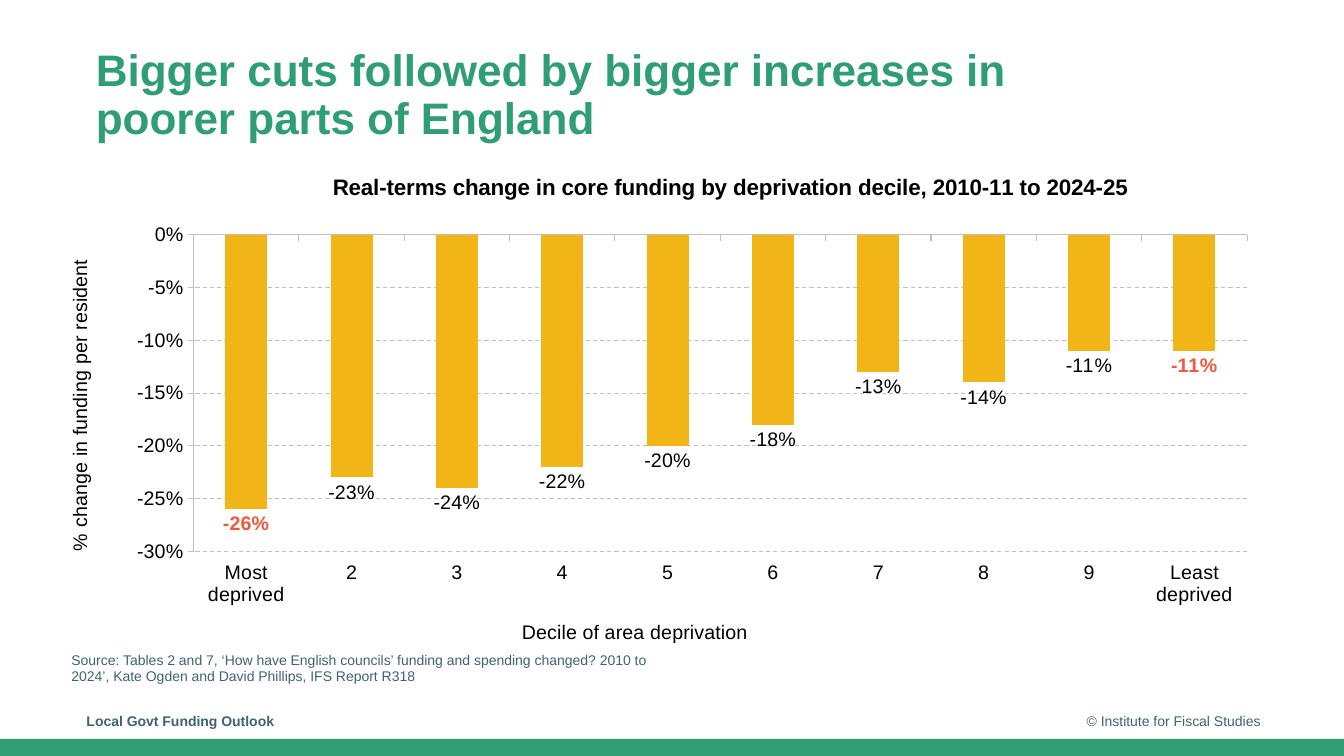
import pptx
import pptx.chart.data
import pptx.dml.color
import pptx.enum.chart
import pptx.enum.dml
import pptx.enum.shapes
import pptx.enum.text
import pptx.oxml
import pptx.oxml.ns
import pptx.util

WIDTH, HEIGHT = 13.33, 7.5
GREEN, SLATE, AMBER, CORAL, GREY, BLACK = "309E75", "40646D", "F2B517", "EE5A3C", "BFBFBF", "000000"
DECILES = ["Most deprived", "2", "3", "4", "5", "6", "7", "8", "9", "Least deprived"]
CHANGES = [-0.26, -0.23, -0.24, -0.22, -0.2, -0.18, -0.13, -0.14, -0.11, -0.11]
qn = pptx.oxml.ns.qn


def colour(value):
    return pptx.dml.color.RGBColor.from_string(value)


def inches(box):
    return [pptx.util.Inches(length) for length in box]


def style_font(font, size=14, color=BLACK, bold=False):
    font.name = "Arial"
    font.size = pptx.util.Pt(size)
    font.bold = bold
    font.color.rgb = colour(color)


def write_text(frame, text, align="LEFT", spacing=None, anchor=None, **style):
    frame.word_wrap = True
    if anchor:
        frame.vertical_anchor = anchor
    para = frame.paragraphs[0]
    para.alignment = getattr(pptx.enum.text.PP_ALIGN, align)
    para.line_spacing = spacing
    span = para.add_run()
    span.text = text
    style_font(span.font, **style)


def add_note(page, box, text, **style):
    note = page.shapes.add_textbox(*inches(box))
    write_text(note.text_frame, text, anchor=pptx.enum.text.MSO_ANCHOR.MIDDLE,
               size=10, color=SLATE, **style)


def add_heading(page, box, text):
    title = page.shapes.title
    title.left, title.top, title.width, title.height = inches(box)
    write_text(title.text_frame, text, spacing=0.9, anchor=pptx.enum.text.MSO_ANCHOR.TOP,
               size=31.5, color=GREEN, bold=True)


def add_footer(page, box):
    left, top, width, height = box
    bar_height = 0.17
    bar = page.shapes.add_shape(pptx.enum.shapes.MSO_SHAPE.RECTANGLE,
                                *inches((left, top + height - bar_height, width, bar_height)))
    bar.shadow.inherit = False
    bar.fill.solid()
    bar.fill.fore_color.rgb = colour(GREEN)
    bar.line.fill.background()
    add_note(page, (left + 0.76, top, 8.84, 0.4), "Local Govt Funding Outlook", bold=True)
    add_note(page, (left + 9.6, top, 3, 0.4), "© Institute for Fiscal Studies", align="RIGHT")


def place_part(element, index, frame, **lengths):
    for old in element.findall(qn("c:layout")):
        element.remove(old)
    inner = '<c:layoutTarget val="inner"/>' if "w" in lengths else ""
    modes = '<c:xMode val="edge"/><c:yMode val="edge"/>'
    sizes = "".join(
        f'<c:{key} val="{length / frame[2 if key in "xw" else 3]:.4f}"/>'
        for key, length in lengths.items())
    element.insert(index, pptx.oxml.parse_xml(
        f'<c:layout {pptx.oxml.ns.nsdecls("c")}><c:manualLayout>'
        f'{inner}{modes}{sizes}</c:manualLayout></c:layout>'))


def add_chart_title(owner, text, box, x, y, **style):
    title = owner.chart_title if hasattr(owner, "chart_title") else owner.axis_title
    frame = title.text_frame
    span = frame.paragraphs[0].add_run()
    span.text = text
    style_font(span.font, **style)
    element = frame._txBody.getparent().getparent()
    place_part(element, 1, box, x=x, y=y)
    return element


def style_line(line):
    line.color.rgb = colour(GREY)
    line.width = pptx.util.Pt(0.75)


def style_axis(axis):
    axis.major_tick_mark = pptx.enum.chart.XL_TICK_MARK.OUTSIDE
    axis.minor_tick_mark = pptx.enum.chart.XL_TICK_MARK.NONE
    style_line(axis.format.line)
    style_font(axis.tick_labels.font)


def style_bars(plot):
    plot.gap_width = 150
    plot.vary_by_categories = False
    series = plot.series[0]
    series.invert_if_negative = False
    series.format.fill.solid()
    series.format.fill.fore_color.rgb = colour(AMBER)
    outside = pptx.enum.chart.XL_LABEL_POSITION.OUTSIDE_END
    labels = series.data_labels
    labels.show_value = True
    labels.number_format = "0%"
    labels.number_format_is_linked = False
    labels.position = outside
    style_font(labels.font)
    for end in (0, len(DECILES) - 1):
        label = series.points[end].data_label
        style_font(label.font, color=CORAL, bold=True)
        label.position = outside


def add_funding_chart(page, box):
    data = pptx.chart.data.CategoryChartData(number_format="0%")
    data.categories = DECILES
    data.add_series("Change in funding", CHANGES)
    chart = page.shapes.add_chart(
        pptx.enum.chart.XL_CHART_TYPE.COLUMN_CLUSTERED, *inches(box), data).chart
    style_font(chart.font)
    chart.has_legend = False
    add_chart_title(
        chart, "Real-terms change in core funding by deprivation decile, 2010-11 to 2024-25",
        box, x=2.9, y=0.14, size=16, bold=True)
    deciles, changes = chart.category_axis, chart.value_axis
    for axis in (deciles, changes):
        style_axis(axis)
    deciles.tick_label_position = pptx.enum.chart.XL_TICK_LABEL_POSITION.LOW
    add_chart_title(deciles, "Decile of area deprivation", box, x=4.78, y=4.58)
    side_title = add_chart_title(changes, "% change in funding per resident", box, x=0.27, y=1.01)
    side_title.find(".//" + qn("a:bodyPr")).set("rot", "-5400000")
    changes.minimum_scale, changes.maximum_scale, changes.major_unit = -0.3, 0, 0.05
    changes.tick_labels.number_format = "0%"
    changes.tick_labels.number_format_is_linked = False
    grid = changes.major_gridlines.format.line
    style_line(grid)
    grid.dash_style = pptx.enum.dml.MSO_LINE.DASH
    style_bars(chart.plots[0])
    plot_area = chart.element.find(".//" + qn("c:plotArea"))
    place_part(plot_area, 0, box, x=1.56, y=0.8, w=10.45, h=3.14)


def main():
    deck = pptx.Presentation()
    deck.slide_width, deck.slide_height = inches((WIDTH, HEIGHT))
    page = deck.slides.add_slide(deck.slide_layouts[5])
    add_footer(page, (0, 6.95, WIDTH, HEIGHT - 6.95))
    add_heading(page, (0.85, 0.43, 10.59, 0.63),
                "Bigger cuts followed by bigger increases in poorer parts of England")
    add_funding_chart(page, (0.36, 1.53, 12.5, 4.96))
    add_note(page, (0.61, 6.3, 6.25, 0.65),
             "Source: Tables 2 and 7, ‘How have English councils’ funding and spending changed? "
             "2010 to 2024’, Kate Ogden and David Phillips, IFS Report R318")
    deck.save("out.pptx")


if __name__ == "__main__":
    main()
